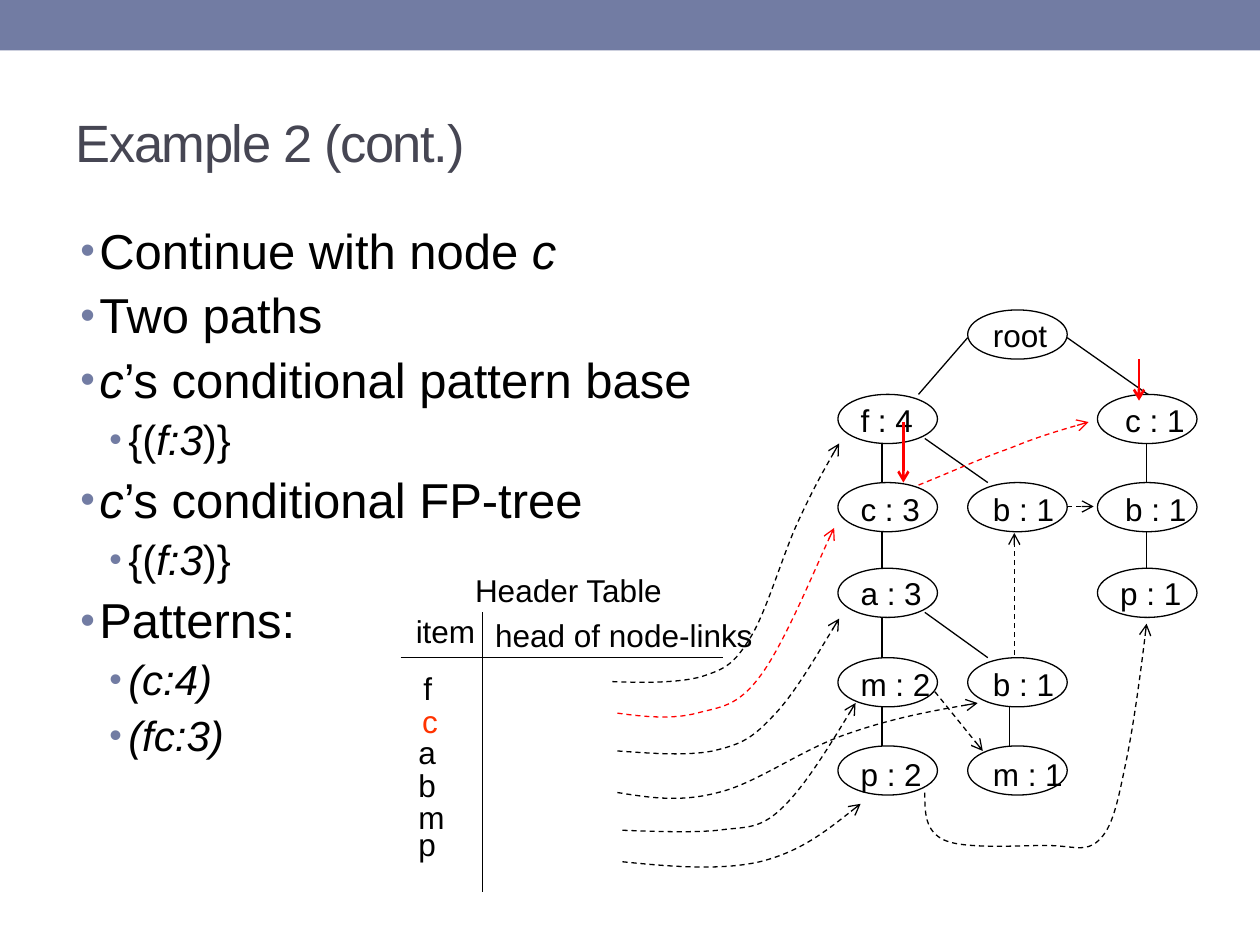
from lxml import etree
from pptx import Presentation
from pptx.dml.color import RGBColor
from pptx.enum.dml import MSO_LINE
from pptx.enum.shapes import MSO_CONNECTOR, MSO_SHAPE
from pptx.enum.text import MSO_ANCHOR, MSO_AUTO_SIZE, PP_ALIGN
from pptx.oxml.ns import qn
from pptx.util import Pt

PX = 9144
DASH = MSO_LINE.DASH
STRAIGHT = MSO_CONNECTOR.STRAIGHT
ELLIPSE = MSO_SHAPE.OVAL
RECTANGLE = MSO_SHAPE.RECTANGLE
LEFT = PP_ALIGN.LEFT
TOP = MSO_ANCHOR.TOP
MIDDLE = MSO_ANCHOR.MIDDLE
GROW = MSO_AUTO_SIZE.SHAPE_TO_FIT_TEXT
FIXED = MSO_AUTO_SIZE.NONE

BLACK = "000000"
RED = "FF0000"
ORANGE = "FF3300"
ACCENT = "727CA3"
TITLE_COLOR = "464653"

BULLETS = [
    (0, [("Continue with node ", False), ("c", True)]),
    (0, [("Two paths", False)]),
    (0, [("c", True), ("’s conditional pattern base", False)]),
    (1, [("{(", False), ("f:3", True), (")}", False)]),
    (0, [("c", True), ("’s conditional FP-tree", False)]),
    (1, [("{(", False), ("f:3", True), (")}", False)]),
    (0, [("Patterns:", False)]),
    (1, [("(c:4)", True)]),
    (1, [("(fc:3)", True)]),
]

HEADER_LABELS = [
    ("Header Table", 377, 453, 151, BLACK),
    ("item", 330, 486, 63, BLACK),
    ("head of node-links", 393, 489, 211, BLACK),
    ("f", 336, 531, 23, BLACK),
    ("c", 335, 557, 23, ORANGE),
    ("a", 332, 582, 23, BLACK),
    ("b", 332, 608, 23, BLACK),
    ("m", 332, 633, 23, BLACK),
    ("p", 332, 655, 23, BLACK),
]
HEADER_RULES = [(318, 522, 574, 522), (383, 486, 383, 708)]

COLUMNS = [665, 768, 871]
ROWS = [246, 313, 383, 451, 522, 592]
LABEL_DROPS = [5, 5, 6, 5, 6, 7]
NODE_SIZE = (79, 39)
NODES = [
    ("root", 1, 0, 788),
    ("f : 4", 0, 1, 683),
    ("c : 3", 0, 2, 683),
    ("a : 3", 0, 3, 683),
    ("m : 2", 0, 4, 683),
    ("p : 2", 0, 5, 683),
    ("b : 1", 1, 2, 788),
    ("b : 1", 1, 4, 788),
    ("m : 1", 1, 5, 788),
    ("c : 1", 2, 1, 893),
    ("b : 1", 2, 2, 893),
    ("p : 1", 2, 3, 889),
]
SLANTED_EDGES = [
    (768, 268, 729, 313),
    (911, 313, 847, 268),
    (784, 383, 734, 348),
    (784, 522, 734, 486),
]
VERTICAL_EDGES = [(700, 1, 5), (801, 4, 5), (910, 1, 3)]

NODE_LINKS = [
    (BLACK, [(486, 541), (512, 542), (539, 542), (557, 537), (575, 531), (582, 528),
             (595, 507), (608, 487), (621, 441), (633, 415), (645, 389), (655, 371), (666, 352)]),
    (RED, [(490, 566), (512, 569), (534, 571), (553, 566), (572, 561), (585, 561),
           (603, 537), (622, 512), (652, 439), (662, 419)]),
    (BLACK, [(490, 596), (518, 598), (545, 600), (566, 596), (586, 591), (595, 588),
             (612, 570), (629, 553), (647, 522), (666, 491)]),
    (BLACK, [(490, 629), (515, 633), (540, 637), (570, 629), (600, 622), (636, 595),
             (671, 583), (705, 571), (740, 564), (776, 558)]),
    (BLACK, [(494, 659), (522, 660), (549, 661), (570, 659), (591, 656), (602, 659),
             (620, 642), (638, 625), (659, 591), (679, 558)]),
    (BLACK, [(494, 684), (533, 688), (572, 691), (603, 684), (635, 676), (659, 657), (683, 638)]),
    (RED, [(729, 385), (754, 375), (778, 364), (801, 356), (823, 347), (843, 341), (864, 335)]),
    (BLACK, [(734, 629), (734, 645), (734, 660), (750, 667), (766, 674), (810, 671),
             (830, 671), (851, 671), (862, 677), (872, 667), (883, 657), (887, 637),
             (893, 608), (899, 580), (905, 537), (910, 495)]),
]
STRAIGHT_LINKS = [(742, 549, 780, 596), (805, 520, 805, 423), (847, 402, 868, 402)]
RED_POINTERS = [(717, 335, 717, 383), (904, 285, 904, 318)]


def color(value):
    return RGBColor.from_string(value)


class SlideBuilder:
    font = "Arial"
    line_width = 0.75

    def __init__(self, slide):
        self.slide = slide

    def place(self, shape, left, top, width, height):
        shape.left, shape.top = left * PX, top * PX
        shape.width, shape.height = width * PX, height * PX

    def style_font(self, font, size, value):
        font.name = self.font
        font.size = Pt(size)
        font.color.rgb = color(value)

    def style_line(self, shape, value, width, dashed, arrow):
        shape.line.color.rgb = color(value)
        shape.line.width = Pt(width)
        if dashed:
            shape.line.dash_style = DASH
        if arrow:
            etree.SubElement(shape.get_or_add_ln(), qn("a:tailEnd"), type="arrow")

    def title(self, text, left, top, width, height):
        shape = self.slide.shapes.title
        self.place(shape, left, top, width, height)
        shape.text_frame.text = text
        shape.text_frame.vertical_anchor = MIDDLE
        shape.text_frame.auto_size = FIXED
        paragraph = shape.text_frame.paragraphs[0]
        paragraph.alignment = LEFT
        self.style_font(paragraph.font, 30, TITLE_COLOR)
        paragraph.runs[0].font._element.set("spc", "-80")

    def band(self, left, top, width, height):
        shape = self.slide.shapes.add_shape(RECTANGLE, 0, 0, 0, 0)
        self.place(shape, left, top, width, height)
        shape.shadow.inherit = False
        shape.fill.solid()
        shape.fill.fore_color.rgb = color(ACCENT)
        shape.line.fill.background()

    def bullets(self, items, left, top, width, height):
        shape = self.slide.shapes.add_textbox(0, 0, 0, 0)
        self.place(shape, left, top, width, height)
        frame = shape.text_frame
        frame.word_wrap = True
        frame.vertical_anchor = TOP
        for index, (level, runs) in enumerate(items):
            paragraph = frame.add_paragraph() if index else frame.paragraphs[0]
            size = (28, 24)[level]
            paragraph.level = level
            paragraph.line_spacing = 0.9
            paragraph.space_before = Pt(round(size * 0.24, 1))
            self.style_font(paragraph.font, size, BLACK)
            for text, italic in runs:
                run = paragraph.add_run()
                run.text = text
                run.font.italic = italic
            self.bullet(paragraph, (15, 38)[level])

    def bullet(self, paragraph, margin):
        properties = paragraph._p.get_or_add_pPr()
        properties.set("marL", str(margin * PX))
        properties.set("indent", str(-15 * PX))
        marks = [
            etree.Element(qn("a:buClr")),
            etree.Element(qn("a:buSzPct"), val="85000"),
            etree.Element(qn("a:buFont"), typeface=self.font),
            etree.Element(qn("a:buChar"), char="•"),
        ]
        etree.SubElement(marks[0], qn("a:srgbClr"), val=ACCENT)
        position = len(properties.xpath("a:lnSpc | a:spcBef"))
        properties[position:position] = marks

    def label(self, text, left, top, width, value=BLACK):
        shape = self.slide.shapes.add_textbox(0, 0, 0, 0)
        self.place(shape, left, top, width, 30)
        frame = shape.text_frame
        frame.margin_left = frame.margin_right = frame.margin_top = frame.margin_bottom = 0
        frame.word_wrap = True
        frame.auto_size = GROW
        frame.text = text
        self.style_font(frame.paragraphs[0].font, 18, value)

    def node(self, text, left, top, label_left, label_top):
        shape = self.slide.shapes.add_shape(ELLIPSE, 0, 0, 0, 0)
        self.place(shape, left, top, *NODE_SIZE)
        shape.shadow.inherit = False
        shape.fill.background()
        self.style_line(shape, BLACK, self.line_width, False, False)
        self.label(text, label_left, label_top, 60 if text.startswith("m") else 50)

    def line(self, ends, value=BLACK, width=line_width, dashed=False, arrow=False):
        connector = self.slide.shapes.add_connector(STRAIGHT, *(end * PX for end in ends))
        self.style_line(connector, value, width, dashed, arrow)
        etree.SubElement(connector.element.spPr, qn("a:effectLst"))

    def curve(self, value, points):
        builder = self.slide.shapes.build_freeform(*points[0], scale=PX)
        builder.add_line_segments(points[1:], close=False)
        shape = builder.convert_to_shape()
        shape.shadow.inherit = False
        shape.fill.background()
        self.style_line(shape, value, self.line_width, True, True)
        outline = shape.element.xpath(".//a:path")[0]
        segments = outline.findall(qn("a:lnTo"))
        for start in range(0, len(segments), 3):
            bezier = etree.SubElement(outline, qn("a:cubicBezTo"))
            for segment in segments[start:start + 3]:
                bezier.append(segment[0])
                outline.remove(segment)


def main():
    presentation = Presentation()
    presentation.slide_width, presentation.slide_height = 1000 * PX, 750 * PX
    builder = SlideBuilder(presentation.slides.add_slide(presentation.slide_layouts[5]))
    builder.band(0, 0, 1000, 40)
    builder.title("Example 2 (cont.)", 50, 58, 900, 108)
    builder.bullets(BULLETS, 54, 175, 900, 533)
    for label in HEADER_LABELS:
        builder.label(*label)
    for ends in HEADER_RULES + SLANTED_EDGES:
        builder.line(ends)
    for x, first, last in VERTICAL_EDGES:
        for row in range(first, last):
            builder.line((x, ROWS[row + 1], x, ROWS[row] + NODE_SIZE[1]))
    for text, column, row, label_left in NODES:
        builder.node(text, COLUMNS[column], ROWS[row], label_left, ROWS[row] + LABEL_DROPS[row])
    for value, points in NODE_LINKS:
        builder.curve(value, points)
    for ends in STRAIGHT_LINKS:
        builder.line(ends, dashed=True, arrow=True)
    for ends in RED_POINTERS:
        builder.line(ends, RED, 1.5, arrow=True)
    presentation.save("out.pptx")


if __name__ == "__main__":
    main()
